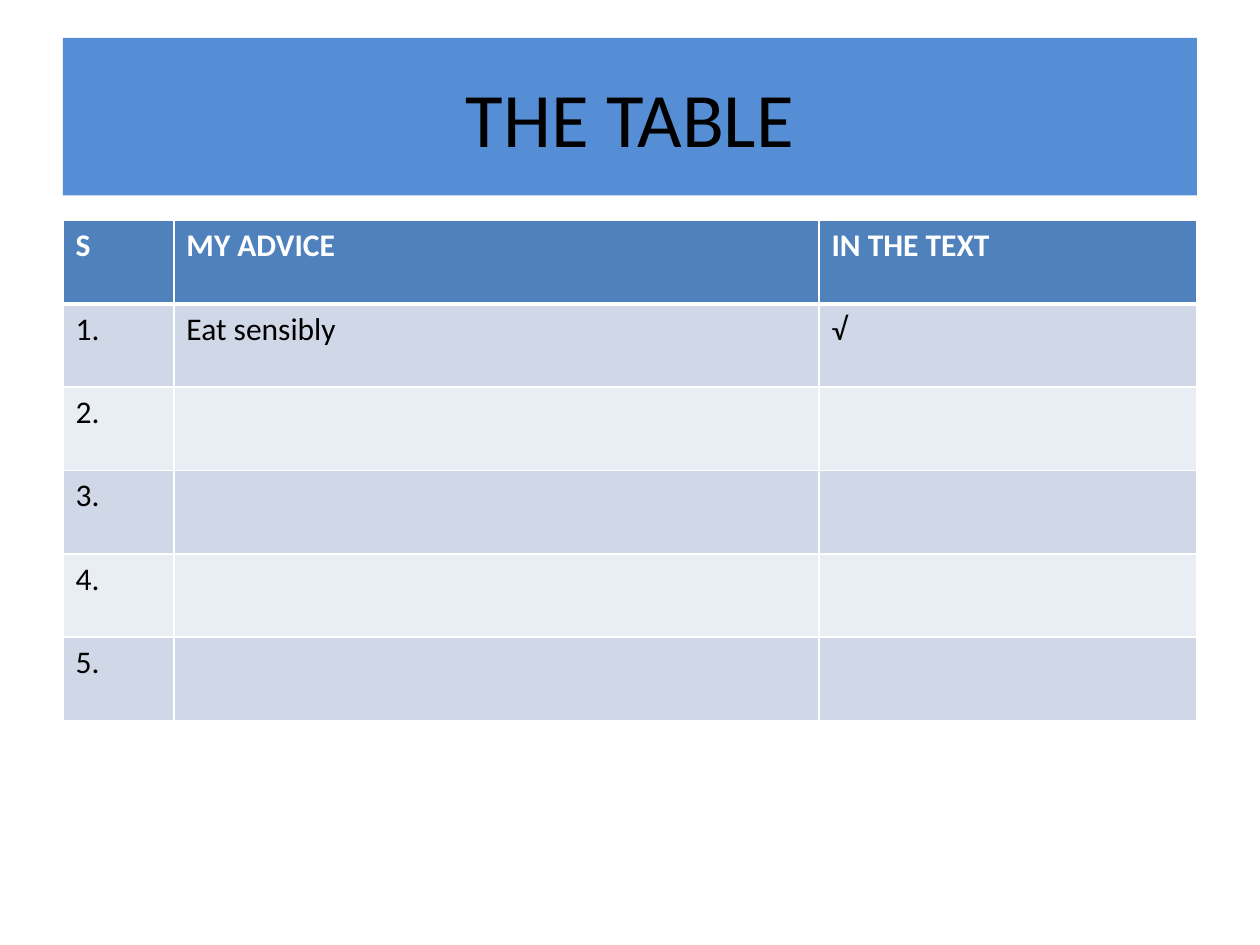
from dataclasses import dataclass

from lxml import etree
from pptx import Presentation
from pptx.dml.color import RGBColor
from pptx.enum.shapes import MSO_SHAPE
from pptx.enum.text import MSO_ANCHOR, PP_ALIGN
from pptx.oxml.ns import qn
from pptx.util import Inches, Pt

RECTANGLE = MSO_SHAPE.RECTANGLE
MIDDLE = MSO_ANCHOR.MIDDLE
CENTER = PP_ALIGN.CENTER

LEFT, WIDTH = 0.5, 9
COLUMN_WIDTHS = (0.88, 5.12, 3)
ROW_HEIGHT = 3.97 / 6
BORDER_COLOR = "FFFFFF"
THIN, THICK = 1, 3


@dataclass(frozen=True)
class RowStyle:
    fill: str
    color: str
    bold: bool = False
    top: int = THIN
    bottom: int = THIN


HEADER = RowStyle("4F81BD", "FFFFFF", bold=True, bottom=THICK)
FIRST = RowStyle("D0D8E8", "000000", top=THICK)
ODD = RowStyle("D0D8E8", "000000")
EVEN = RowStyle("E9EDF4", "000000")

ROWS = (
    (HEADER, ("S", "MY ADVICE", "IN THE TEXT")),
    (FIRST, ("1.", "Eat sensibly", "√")),
    (EVEN, ("2.", "", "")),
    (ODD, ("3.", "", "")),
    (EVEN, ("4.", "", "")),
    (ODD, ("5.", "", "")),
)


def rgb(value: str) -> RGBColor:
    return RGBColor.from_string(value)


def set_text(frame, text: str, size: int, color: str, bold: bool = False) -> None:
    paragraph = frame.paragraphs[0]
    if text:
        paragraph.text = text
    formats = {"name": "Calibri", "size": Pt(size), "bold": bold}
    for font in [paragraph.font, *(run.font for run in paragraph.runs)]:
        for attribute, value in formats.items():
            setattr(font, attribute, value)
        font.color.rgb = rgb(color)


def set_borders(cell, top: int, bottom: int) -> None:
    """Add the border lines; call before the fill to keep the XML order."""
    properties = cell._tc.get_or_add_tcPr()
    for side, width in {"L": THIN, "R": THIN, "T": top, "B": bottom}.items():
        line = etree.SubElement(properties, qn(f"a:ln{side}"), w=str(Pt(width)))
        solid = etree.SubElement(line, qn("a:solidFill"))
        etree.SubElement(solid, qn("a:srgbClr"), val=BORDER_COLOR)


def add_title(slide, text: str) -> None:
    shape = slide.shapes.add_shape(
        RECTANGLE, Inches(LEFT), Inches(0.3), Inches(WIDTH), Inches(1.25)
    )
    shape.shadow.inherit = False
    shape.fill.solid()
    shape.fill.fore_color.rgb = rgb("558ED5")
    shape.line.fill.background()
    frame = shape.text_frame
    frame.word_wrap = True
    frame.vertical_anchor = MIDDLE
    frame.paragraphs[0].alignment = CENTER
    set_text(frame, text, 44, "000000")


def add_advice_table(slide) -> None:
    table = slide.shapes.add_table(
        len(ROWS), len(COLUMN_WIDTHS), Inches(LEFT), Inches(1.75),
        Inches(WIDTH), Inches(ROW_HEIGHT * len(ROWS)),
    ).table
    for column, width in zip(table.columns, COLUMN_WIDTHS):
        column.width = Inches(width)
    for row, (style, texts) in zip(table.rows, ROWS):
        row.height = Inches(ROW_HEIGHT)
        for cell, text in zip(row.cells, texts):
            set_borders(cell, style.top, style.bottom)
            cell.fill.solid()
            cell.fill.fore_color.rgb = rgb(style.fill)
            set_text(cell.text_frame, text, 18, style.color, style.bold)


def main() -> None:
    presentation = Presentation()
    presentation.slide_width = Inches(10)
    presentation.slide_height = Inches(7.5)
    slide = presentation.slides.add_slide(presentation.slide_layouts[6])

    # Title band
    add_title(slide, "THE TABLE")

    # Advice table
    add_advice_table(slide)

    presentation.save("out.pptx")


if __name__ == "__main__":
    main()
